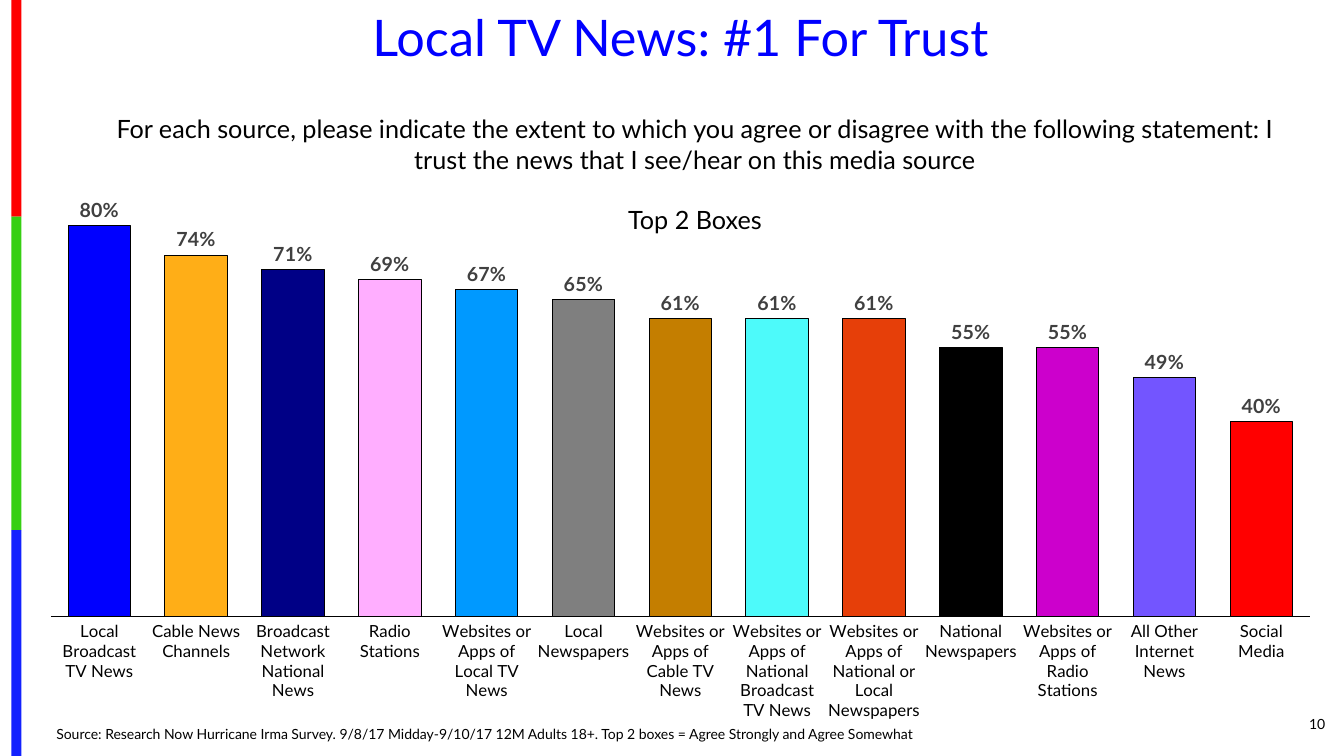
from dataclasses import dataclass

from pptx import Presentation
from pptx.chart.data import CategoryChartData
from pptx.dml.color import RGBColor
from pptx.enum.chart import XL_CHART_TYPE, XL_LABEL_POSITION, XL_TICK_MARK
from pptx.enum.shapes import MSO_SHAPE
from pptx.enum.text import MSO_ANCHOR, PP_ALIGN
from pptx.oxml import parse_xml
from pptx.oxml.ns import qn
from pptx.slide import Slide
from pptx.util import Cm, Pt

FONT = "Lato"
COLORS = {
    "text": "000000",
    "title": "0000FF",
    "label": "404040",
    "stripe_red": "FE0000",
    "stripe_green": "36CF12",
    "stripe_blue": "1322FE",
    "blue": "0000FF",
    "amber": "FFAE17",
    "navy": "000086",
    "pink": "FFAEFF",
    "sky": "0099FF",
    "gray": "7F7F7F",
    "ochre": "C47E00",
    "aqua": "4DFAFA",
    "orange": "E63F09",
    "black": "000000",
    "magenta": "CC00CC",
    "violet": "7355FF",
    "red": "FF0000",
}


@dataclass
class Stripe:
    height: float
    color: str


@dataclass
class Source:
    name: str
    trust: float
    color: str


@dataclass
class Caption:
    paragraphs: list[str]
    left: float
    top: float
    width: float
    height: float
    size: float
    align: PP_ALIGN
    color: str = "text"
    anchor: MSO_ANCHOR = MSO_ANCHOR.TOP
    line_spacing: float = 1.0
    gap: float = 0


STRIPES = [
    Stripe(5.46, "stripe_red"),
    Stripe(7.9, "stripe_green"),
    Stripe(5.69, "stripe_blue"),
]

SOURCES = [
    Source("Local Broadcast TV News", 0.80, "blue"),
    Source("Cable News Channels", 0.74, "amber"),
    Source("Broadcast Network National News", 0.71, "navy"),
    Source("Radio Stations", 0.69, "pink"),
    Source("Websites or Apps of Local TV News", 0.67, "sky"),
    Source("Local Newspapers", 0.65, "gray"),
    Source("Websites or Apps of Cable TV News", 0.61, "ochre"),
    Source("Websites or Apps of National Broadcast TV News", 0.61, "aqua"),
    Source("Websites or Apps of National or Local Newspapers", 0.61, "orange"),
    Source("National Newspapers", 0.55, "black"),
    Source("Websites or Apps of Radio Stations", 0.55, "magenta"),
    Source("All Other Internet News", 0.49, "violet"),
    Source("Social Media", 0.40, "red"),
]

CAPTIONS = [
    Caption(["Local TV News: #1 For Trust"], 0.64, 0.2, 33.02, 1.65, 36,
            PP_ALIGN.CENTER, color="title", line_spacing=0.9),
    Caption(["10"], 30.91, 17.73, 2.74, 1.02, 10, PP_ALIGN.RIGHT,
            anchor=MSO_ANCHOR.MIDDLE),
    Caption(["For each source, please indicate the extent to which you agree or "
             "disagree with the following statement: I trust the news that I "
             "see/hear on this media source",
             "Top 2 Boxes"], 2.54, 2.74, 29.95, 3.33, 18, PP_ALIGN.CENTER, gap=21.6),
    Caption(["Source: Research Now Hurricane Irma Survey. 9/8/17 Midday-9/10/17 "
             "12M Adults 18+. Top 2 boxes = Agree Strongly and Agree Somewhat"],
            1.17, 18.19, 24, 0.64, 10, PP_ALIGN.LEFT,
            anchor=MSO_ANCHOR.BOTTOM, line_spacing=0.9),
]

PLOT_LAYOUT = (
    '<c:layout xmlns:c="http://schemas.openxmlformats.org/drawingml/2006/chart">'
    '<c:manualLayout><c:layoutTarget val="inner"/>'
    '<c:xMode val="edge"/><c:yMode val="edge"/>'
    '<c:x val="0"/><c:y val="0.01"/><c:w val="1"/><c:h val="0.81"/>'
    '</c:manualLayout></c:layout>'
)


def rgb(name: str) -> RGBColor:
    return RGBColor.from_string(COLORS[name])


def style_font(font, size: float, color: str = "text") -> None:
    font.name = FONT
    font.size = Pt(size)
    font.color.rgb = rgb(color)


def style_line(line) -> None:
    line.color.rgb = rgb("text")
    line.width = Pt(0.75)


def add_stripes(slide: Slide) -> None:
    top = 0.0
    for stripe in STRIPES:
        bar = slide.shapes.add_shape(MSO_SHAPE.RECTANGLE, Cm(0.29), Cm(top),
                                     Cm(0.25), Cm(stripe.height))
        bar.shadow.inherit = False
        bar.fill.solid()
        bar.fill.fore_color.rgb = rgb(stripe.color)
        bar.line.fill.background()
        top += stripe.height


def add_trust_chart(slide: Slide) -> None:
    data = CategoryChartData(number_format="0%")
    data.categories = [source.name for source in SOURCES]
    data.add_series("Series 1", [source.trust for source in SOURCES])
    chart = slide.shapes.add_chart(XL_CHART_TYPE.COLUMN_CLUSTERED, Cm(1.27), Cm(4.32),
                                   Cm(31.75), Cm(13.82), data).chart
    chart.has_title = False
    chart.has_legend = False
    style_font(chart.font, 10)

    # Plot area
    plot_area = chart.element.find(".//" + qn("c:plotArea"))
    for layout in plot_area.findall(qn("c:layout")):
        plot_area.remove(layout)
    plot_area.insert(0, parse_xml(PLOT_LAYOUT))

    # Axes
    sources_axis = chart.category_axis
    sources_axis.major_tick_mark = XL_TICK_MARK.NONE
    style_font(sources_axis.tick_labels.font, 12)
    style_line(sources_axis.format.line)
    trust_axis = chart.value_axis
    trust_axis.minimum_scale = 0
    trust_axis.maximum_scale = 0.9
    trust_axis.has_major_gridlines = False
    trust_axis.visible = False

    # Columns and their labels
    plot = chart.plots[0]
    plot.vary_by_categories = False
    plot.gap_width = 55
    plot.overlap = -30
    trust = plot.series[0]
    for index, source in enumerate(SOURCES):
        column = trust.points[index].format
        column.fill.solid()
        column.fill.fore_color.rgb = rgb(source.color)
        style_line(column.line)
    labels = trust.data_labels
    labels.show_value = True
    labels.number_format = "0%"
    labels.number_format_is_linked = False
    labels.position = XL_LABEL_POSITION.OUTSIDE_END
    style_font(labels.font, 14, "label")
    labels.font.bold = True


def add_caption(slide: Slide, caption: Caption) -> None:
    frame = slide.shapes.add_textbox(Cm(caption.left), Cm(caption.top),
                                     Cm(caption.width), Cm(caption.height)).text_frame
    frame.word_wrap = True
    frame.vertical_anchor = caption.anchor
    frame.text = "\n".join(caption.paragraphs)
    for index, paragraph in enumerate(frame.paragraphs):
        paragraph.alignment = caption.align
        paragraph.line_spacing = caption.line_spacing
        if index:
            paragraph.space_before = Pt(caption.gap)
        style_font(paragraph.font, caption.size, caption.color)


def main() -> None:
    presentation = Presentation()
    presentation.slide_width = Cm(33.87)
    presentation.slide_height = Cm(19.05)
    slide = presentation.slides.add_slide(presentation.slide_layouts[6])
    add_stripes(slide)
    add_trust_chart(slide)
    for caption in CAPTIONS:
        add_caption(slide, caption)
    presentation.save("out.pptx")


if __name__ == "__main__":
    main()
